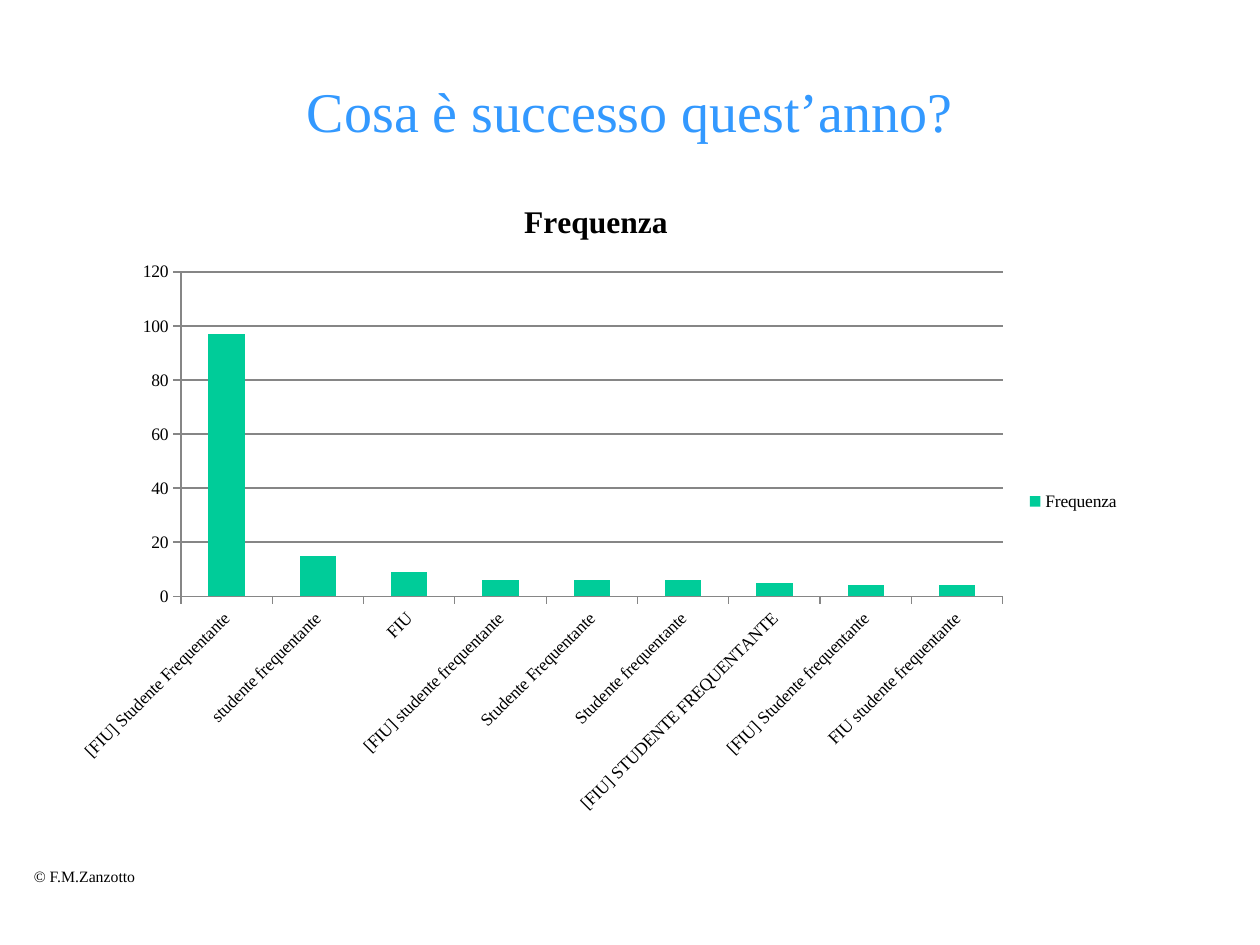
from lxml import etree
from pptx import Presentation
from pptx.chart.data import CategoryChartData
from pptx.dml.color import RGBColor
from pptx.enum.chart import XL_CHART_TYPE, XL_LEGEND_POSITION, XL_TICK_MARK
from pptx.enum.shapes import MSO_CONNECTOR
from pptx.enum.text import MSO_ANCHOR, PP_ALIGN
from pptx.oxml.ns import qn
from pptx.util import Inches, Pt

COLUMNS = XL_CHART_TYPE.COLUMN_CLUSTERED
RIGHT = XL_LEGEND_POSITION.RIGHT
OUTSIDE = XL_TICK_MARK.OUTSIDE
STRAIGHT = MSO_CONNECTOR.STRAIGHT
MIDDLE = MSO_ANCHOR.MIDDLE
LEFT, CENTER = PP_ALIGN.LEFT, PP_ALIGN.CENTER

FONT = "Times New Roman"
COLORS = {"title": "3399FF", "text": "000000", "bar": "00CC99",
          "axis": "868686", "rule": "FFFFFF"}
FREQUENCIES = [
    ("[FIU] Studente Frequentante", 97),
    ("studente frequentante", 15),
    ("FIU", 9),
    ("[FIU] studente frequentante", 6),
    ("Studente Frequentante", 6),
    ("Studente frequentante", 6),
    ("[FIU] STUDENTE FREQUENTANTE", 5),
    ("[FIU] Studente frequentante", 4),
    ("FIU studente frequentante", 4),
]


def rgb(name):
    return RGBColor.from_string(COLORS[name])


def style_font(font, size, color="text", bold=False):
    font.name = FONT
    font.size = Pt(size)
    font.bold = bold
    font.color.rgb = rgb(color)


def write(tf, text, size, color, align):
    p = tf.paragraphs[0]
    p.alignment = align
    r = p.add_run()
    r.text = text
    style_font(r.font, size, color)


def add_rule(s, x1, y1, x2, y2):
    line = s.shapes.add_connector(STRAIGHT, Inches(x1), Inches(y1), Inches(x2), Inches(y2))
    line.line.color.rgb = rgb("rule")
    line.line.width = Pt(3)
    etree.SubElement(line._element.spPr, qn("a:effectLst"))


def add_title(s, text):
    sp = s.shapes.title
    sp.left, sp.top = Inches(0.75), Inches(0.5)
    sp.width, sp.height = Inches(8.5), Inches(0.75)
    sp.text_frame.vertical_anchor = MIDDLE
    write(sp.text_frame, text, 32, "title", CENTER)


def add_footer(s, text):
    sp = s.shapes.add_textbox(Inches(0.17), Inches(6.83), Inches(1.02), Inches(0.25))
    sp.text_frame.word_wrap = False
    write(sp.text_frame, text, 9, "text", LEFT)


def style_axis(axis):
    axis.major_tick_mark = OUTSIDE
    axis.format.line.color.rgb = rgb("axis")
    axis.format.line.width = Pt(0.75)
    style_font(axis.tick_labels.font, 10)


def add_column_chart(s, name, rows):
    data = CategoryChartData()
    data.categories = [label for label, _ in rows]
    data.add_series(name, [value for _, value in rows])
    chart = s.shapes.add_chart(COLUMNS, Inches(0.47), Inches(1.4),
                               Inches(8.52), Inches(5.16), data).chart
    style_font(chart.font, 10)

    chart.has_title = True
    r = chart.chart_title.text_frame.paragraphs[0].add_run()
    r.text = name
    style_font(r.font, 18, bold=True)
    chart.chart_title.include_in_layout = False

    chart.has_legend = True
    chart.legend.position = RIGHT
    chart.legend.include_in_layout = False
    style_font(chart.legend.font, 10)

    for axis in (chart.category_axis, chart.value_axis):
        style_axis(axis)
    # Slant the category labels by 45 degrees
    chart.category_axis._element.txPr.bodyPr.set("rot", "-2700000")

    values = chart.value_axis
    values.minimum_scale, values.maximum_scale, values.major_unit = 0, 120, 20
    values.has_major_gridlines = True
    values.major_gridlines.format.line.color.rgb = rgb("axis")
    values.major_gridlines.format.line.width = Pt(0.75)

    plot = chart.plots[0]
    plot.gap_width = 150
    plot.vary_by_categories = False
    fill = plot.series[0].format.fill
    fill.solid()
    fill.fore_color.rgb = rgb("bar")


def main():
    prs = Presentation()
    prs.slide_width, prs.slide_height = Inches(10), Inches(7.5)
    s = prs.slides.add_slide(prs.slide_layouts[5])
    add_rule(s, 0.51, 0.12, 9.17, 0.12)
    add_footer(s, "© F.M.Zanzotto")
    add_rule(s, 10, 6.82, 0.06, 6.83)
    add_title(s, "Cosa è successo quest’anno?")
    add_column_chart(s, "Frequenza", FREQUENCIES)
    prs.save("out.pptx")


if __name__ == "__main__":
    main()
